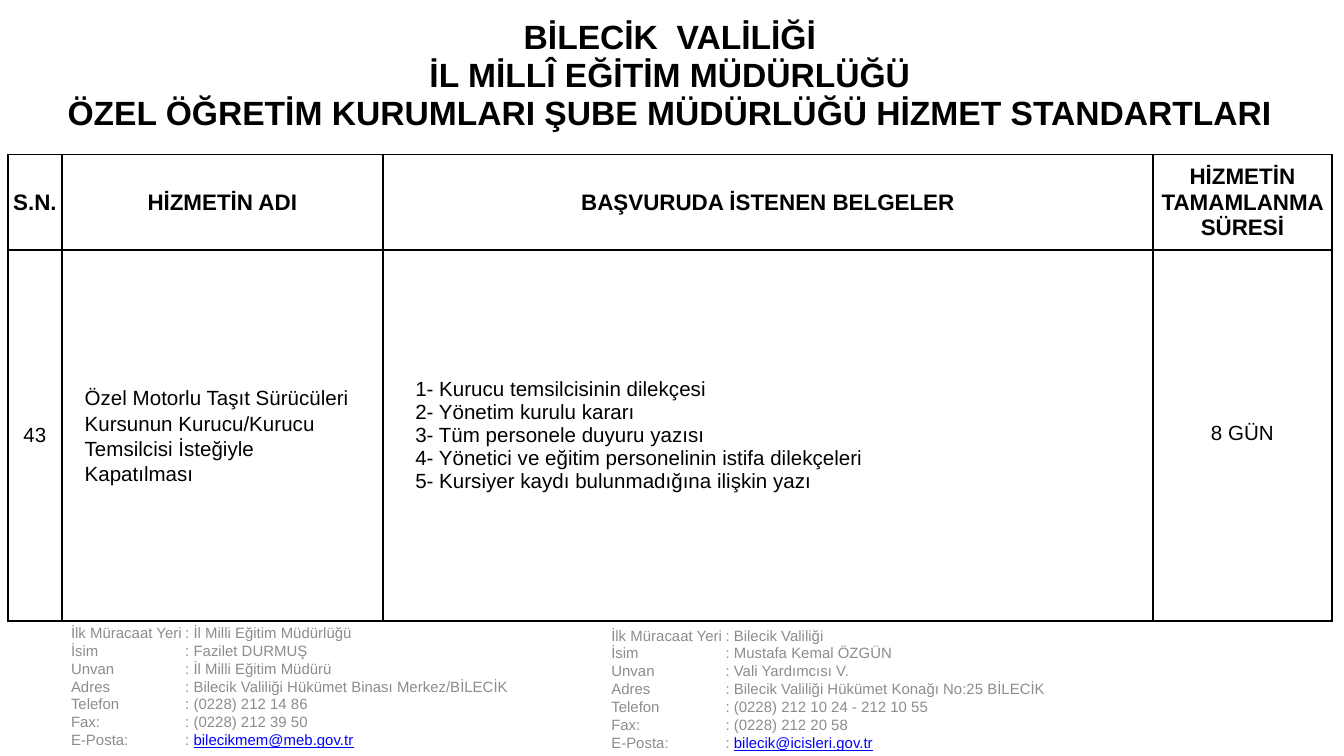
import pptx
import pptx.dml.color
import pptx.enum.text
import pptx.oxml.ns
import pptx.util
from lxml import etree
from pptx.util import Inches

BLACK = pptx.dml.color.RGBColor(0x00, 0x00, 0x00)
GRAY = pptx.dml.color.RGBColor(0x8C, 0x8C, 0x8C)
LINK_BLUE = pptx.dml.color.RGBColor(0x00, 0x00, 0xFF)
FONT = "Arial"
CENTER = pptx.enum.text.PP_ALIGN.CENTER
LEFT = pptx.enum.text.PP_ALIGN.LEFT
MIDDLE = pptx.enum.text.MSO_ANCHOR.MIDDLE
BOTTOM = pptx.enum.text.MSO_ANCHOR.BOTTOM

COLUMN_WIDTHS = [0.4, 2.39, 5.73, 1.33]
ROW_HEIGHTS = [1.17, 0.71, 2.76]

HEADING = ["BİLECİK  VALİLİĞİ", "İL MİLLÎ EĞİTİM MÜDÜRLÜĞÜ",
           "ÖZEL ÖĞRETİM KURUMLARI ŞUBE MÜDÜRLÜĞÜ HİZMET STANDARTLARI"]
COLUMN_TITLES = ["S.N.", "HİZMETİN ADI", "BAŞVURUDA İSTENEN BELGELER",
                 "HİZMETİN TAMAMLANMA SÜRESİ"]
SERVICE = ("Özel Motorlu Taşıt Sürücüleri Kursunun Kurucu/Kurucu "
           "Temsilcisi İsteğiyle Kapatılması")
DOCUMENTS = ["1- Kurucu temsilcisinin dilekçesi",
             "2- Yönetim kurulu kararı",
             "3- Tüm personele duyuru yazısı",
             "4- Yönetici ve eğitim personelinin istifa dilekçeleri",
             "5- Kursiyer kaydı bulunmadığına ilişkin yazı"]

CONTACT_LABELS = ["İlk Müracaat Yeri", "İsim", "Unvan", "Adres", "Telefon",
                  "Fax:", "E-Posta:"]
DIRECTORATE = ["İl Milli Eğitim Müdürlüğü", "Fazilet DURMUŞ",
               "İl Milli Eğitim Müdürü",
               "Bilecik Valiliği Hükümet Binası Merkez/BİLECİK",
               "(0228) 212 14 86", "(0228) 212 39 50",
               "bilecikmem@meb.gov.tr"]
GOVERNORSHIP = ["Bilecik Valiliği", "Mustafa Kemal ÖZGÜN",
                "Vali Yardımcısı V.",
                "Bilecik Valiliği Hükümet Konağı No:25 BİLECİK",
                "(0228) 212 10 24 - 212 10 55", "(0228) 212 20 58",
                "bilecik@icisleri.gov.tr"]


def add_text(paragraph, text, size=11, color=BLACK, bold=False,
             underline=False, align=LEFT, spacing=None):
    """Append a formatted run to a paragraph."""
    paragraph.alignment = align
    if spacing is not None:
        paragraph.line_spacing = spacing
    run = paragraph.add_run()
    run.text = text
    run.font.name = FONT
    run.font.size = pptx.util.Pt(size)
    run.font.bold = bold
    run.font.underline = underline
    run.font.color.rgb = color


def next_paragraph(text_frame, index):
    return text_frame.paragraphs[0] if index == 0 else text_frame.add_paragraph()


def add_tab_stop(paragraph, position):
    properties = paragraph._p.get_or_add_pPr()
    tab_list = etree.SubElement(properties, pptx.oxml.ns.qn("a:tabLst"))
    etree.SubElement(tab_list, pptx.oxml.ns.qn("a:tab"),
                     pos=str(position), algn="l")


def set_borders(cell, sides):
    """Draw a 1 pt black line on the given sides, no line on the others."""
    properties = cell._tc.get_or_add_tcPr()
    for index, side in enumerate("LRTB"):
        line = etree.Element(pptx.oxml.ns.qn(f"a:ln{side}"),
                             w=str(pptx.util.Pt(1)))
        if side in sides:
            fill = etree.SubElement(line, pptx.oxml.ns.qn("a:solidFill"))
            etree.SubElement(fill, pptx.oxml.ns.qn("a:srgbClr"), val=str(BLACK))
        else:
            etree.SubElement(line, pptx.oxml.ns.qn("a:noFill"))
        properties.insert(index, line)


def fill_cell(cell, lines, margin=None, indent=0, **text_format):
    cell.vertical_anchor = MIDDLE
    if margin is not None:
        cell.margin_left = cell.margin_right = Inches(margin)
        cell.margin_top = cell.margin_bottom = Inches(margin)
    for index, line in enumerate(lines):
        paragraph = next_paragraph(cell.text_frame, index)
        add_text(paragraph, line, **text_format)
        if indent:
            properties = paragraph._p.get_or_add_pPr()
            properties.set("marL", str(Inches(indent)))
            properties.set("indent", "0")


def add_service_table(slide):
    shape = slide.shapes.add_table(
        len(ROW_HEIGHTS), len(COLUMN_WIDTHS), Inches(0.06), Inches(-0.02),
        Inches(sum(COLUMN_WIDTHS)), Inches(sum(ROW_HEIGHTS)))
    table = shape.table
    table.first_row = table.horz_banding = False
    for column, width in zip(table.columns, COLUMN_WIDTHS):
        column.width = Inches(width)
    for row_index, height in enumerate(ROW_HEIGHTS):
        table.rows[row_index].height = Inches(height)
        for cell in table.rows[row_index].cells:
            cell.fill.background()
            set_borders(cell, "LRTB" if row_index else "B")

    # Heading across all columns
    table.cell(0, 0).merge(table.cell(0, len(COLUMN_WIDTHS) - 1))
    fill_cell(table.cell(0, 0), HEADING, margin=0, size=18, bold=True,
              align=CENTER)

    # Column titles
    for index, title in enumerate(COLUMN_TITLES):
        fill_cell(table.cell(1, index), [title], margin=0, size=12, bold=True,
                  align=CENTER)

    # Service entry
    fill_cell(table.cell(2, 0), ["43"], margin=0, align=CENTER)
    service_cell = table.cell(2, 1)
    fill_cell(service_cell, [SERVICE], indent=0.07, spacing=1.1)
    service_cell.margin_right = Inches(0.2)
    fill_cell(table.cell(2, 2), DOCUMENTS, indent=0.14)
    fill_cell(table.cell(2, 3), ["8 GÜN"], align=CENTER,
              spacing=pptx.util.Pt(10))


def add_contact(slide, left, top, values):
    shape = slide.shapes.add_textbox(Inches(left), Inches(top),
                                     Inches(4.72), Inches(1))
    text_frame = shape.text_frame
    text_frame.word_wrap = True
    text_frame.vertical_anchor = BOTTOM
    for index, (label, value) in enumerate(zip(CONTACT_LABELS, values)):
        paragraph = next_paragraph(text_frame, index)
        add_text(paragraph, f"{label}\t: ", size=8, color=GRAY)
        is_mail = "@" in value
        add_text(paragraph, value, size=8, underline=is_mail,
                 color=LINK_BLUE if is_mail else GRAY)
        add_tab_stop(paragraph, Inches(0.85))


def main():
    presentation = pptx.Presentation()
    # Widescreen 16:9
    presentation.slide_width = Inches(10)
    presentation.slide_height = presentation.slide_width * 9 // 16
    slide = presentation.slides.add_slide(presentation.slide_layouts[6])

    # Contact details below the table
    add_contact(slide, 0.43, 4.62, DIRECTORATE)
    add_contact(slide, 4.45, 4.64, GOVERNORSHIP)

    add_service_table(slide)
    presentation.save("out.pptx")


if __name__ == "__main__":
    main()
